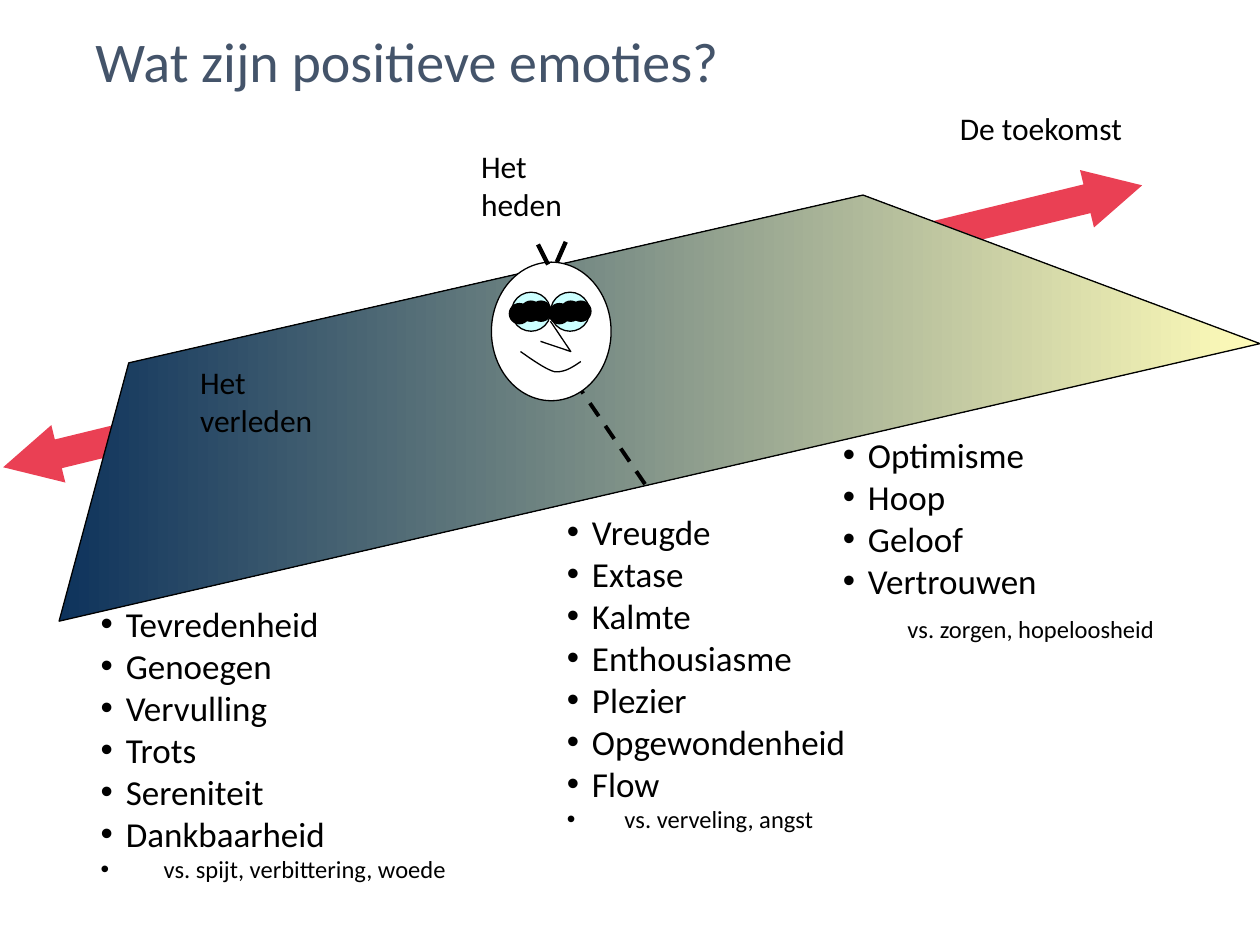
import dataclasses

import pptx
import pptx.dml.color
import pptx.enum.dml
import pptx.enum.shapes
import pptx.enum.text
import pptx.oxml.ns
import pptx.util
from lxml import etree

Pt = pptx.util.Pt
SHAPE = pptx.enum.shapes.MSO_SHAPE
qn = pptx.oxml.ns.qn


@dataclasses.dataclass(frozen=True)
class Theme:
    font: str = "Calibri"
    title: str = "44546A"
    ink: str = "000000"
    arrow: str = "EA4054"
    past: str = "0E335C"
    future: str = "FFFCB9"
    face: str = "FFFFFF"
    eye: str = "CCFFFF"
    title_size: float = 32
    label_size: float = 18
    item_size: float = 20
    contrast_size: float = 14
    outline: float = 0.75


THEME = Theme()


def rgb(color):
    return pptx.dml.color.RGBColor.from_string(color)


def outline(sp, width=THEME.outline):
    sp.line.color.rgb = rgb(THEME.ink)
    sp.line.width = Pt(width)


def add_arrow(s, left, top, rotation):
    sp = s.shapes.add_shape(SHAPE.LEFT_ARROW, Pt(left), Pt(top), Pt(130.3), Pt(33.8))
    sp.rotation = rotation
    sp.adjustments[0], sp.adjustments[1] = 0.5, 0.96
    sp.shadow.inherit = False
    sp.fill.solid()
    sp.fill.fore_color.rgb = rgb(THEME.arrow)
    sp.line.fill.background()


def add_oval(s, left, top, width, height, color):
    sp = s.shapes.add_shape(SHAPE.OVAL, Pt(left), Pt(top), Pt(width), Pt(height))
    sp.shadow.inherit = False
    sp.fill.solid()
    sp.fill.fore_color.rgb = rgb(color)
    outline(sp)


def add_line(s, start, end, width, dash=None):
    sp = s.shapes.add_connector(pptx.enum.shapes.MSO_CONNECTOR.STRAIGHT,
                                *(Pt(v) for v in start + end))
    outline(sp, width)
    if dash is not None:
        sp.line.dash_style = dash
    etree.SubElement(sp.element.spPr, qn("a:effectLst"))


def add_freeform(s, points, close=False):
    first, *rest = [(Pt(x), Pt(y)) for x, y in points]
    builder = s.shapes.build_freeform(*first)
    builder.add_line_segments(rest, close=close)
    sp = builder.convert_to_shape()
    sp.shadow.inherit = False
    sp.fill.background()
    outline(sp)
    return sp


def bezier(p0, p1, p2, p3, steps=10):
    """Points along a cubic curve, both ends included."""
    ts = [i / steps for i in range(steps + 1)]
    return [tuple((1 - t) ** 3 * a + 3 * (1 - t) ** 2 * t * b
                  + 3 * (1 - t) * t ** 2 * c + t ** 3 * d
                  for a, b, c, d in zip(p0, p1, p2, p3)) for t in ts]


def add_text_frame(s, left, top, width, height):
    tf = s.shapes.add_textbox(Pt(left), Pt(top), Pt(width), Pt(height)).text_frame
    tf.word_wrap = True
    tf.auto_size = pptx.enum.text.MSO_AUTO_SIZE.SHAPE_TO_FIT_TEXT
    return tf


def add_run(p, text, size, color=THEME.ink):
    r = p.add_run()
    r.text = text
    r.font.name = THEME.font
    r.font.size = Pt(size)
    r.font.color.rgb = rgb(color)


def set_indent(p, margin, bullet=False):
    pPr = p._p.get_or_add_pPr()
    pPr.set("marL", str(Pt(margin)))
    pPr.set("indent", str(Pt(-margin if bullet else 0)))
    if bullet:
        etree.SubElement(pPr, qn("a:buFont")).set("typeface", "Arial")
        etree.SubElement(pPr, qn("a:buChar")).set("char", "•")


def add_label(s, box, text):
    add_run(add_text_frame(s, *box).paragraphs[0], text, THEME.label_size)


def add_emotions(s, box, items, contrast, margin, bullet=True):
    tf = add_text_frame(s, *box)
    for i, item in enumerate(items):
        p = tf.add_paragraph() if i else tf.paragraphs[0]
        set_indent(p, 14.4, bullet=True)
        add_run(p, item, THEME.item_size)
    p = tf.add_paragraph()
    if not bullet:
        p.space_before = Pt(7)
    set_indent(p, margin, bullet)
    add_run(p, contrast, THEME.contrast_size)


def add_title(s, text):
    p = add_text_frame(s, -24.5, 11.5, 585.4, 46.1).paragraphs[0]
    set_indent(p, 72)
    add_run(p, text, THEME.title_size, THEME.title)


def add_time_plane(s):
    sp = add_freeform(s, [(33.8, 355), (73.6, 207.4), (493.2, 111.5), (720, 196.4)],
                      close=True)
    sp.fill.gradient()
    sp.fill.gradient_angle = 0
    for stop, position, color in zip(sp.fill.gradient_stops, (0, 1),
                                     (THEME.past, THEME.future)):
        stop.position = position
        stop.color.rgb = rgb(color)


def add_face(s):
    add_oval(s, 280.8, 149.8, 68.4, 79.2, THEME.face)
    for left in (292.3, 314.6):
        add_oval(s, left, 167, 22.3, 22.3, THEME.eye)
    # Mouth and nose
    middle = (316.8, 212.4)
    mouth = bezier((331.9, 206.6), (327.6, 209.5), (322.6, 213.1), middle)
    mouth += bezier(middle, (311.8, 211), (304.6, 205.9), (297.4, 200.9))[1:]
    add_freeform(s, mouth)
    add_freeform(s, [(314.6, 183.6), (326.2, 200.9), (308.9, 195.1)])
    # Hair
    add_line(s, (313.2, 151.2), (307.4, 139.7), 2.5)
    add_line(s, (318.2, 149.8), (323.3, 138.2), 2.5)
    # Rolling pupils, three positions in each eye
    for left, top in ((326.2, 172.1), (320.4, 172.1), (313.9, 173.5)):
        for shift in (0, -22.8):
            add_oval(s, left + shift, top, 11.5, 11.5, THEME.ink)


def main():
    prs = pptx.Presentation()
    prs.slide_width, prs.slide_height = Pt(720), Pt(540)
    s = prs.slides.add_slide(prs.slide_layouts[6])

    # Time axis
    add_arrow(s, 0, 234.7, 346.3)
    add_arrow(s, 524.2, 104.4, 166.3)
    add_title(s, "Wat zijn positieve emoties?")
    add_time_plane(s)
    add_line(s, (293, 165.6), (369.5, 278), 2.25, pptx.enum.dml.MSO_LINE.DASH)

    # Periods
    add_label(s, (541.4, 59, 115.2, 28.8), "De toekomst")
    add_label(s, (107.3, 203.8, 105, 51.1), "Het verleden")
    add_label(s, (267.8, 80.6, 85, 51.1), "Het heden")

    # Emotions for each period
    add_emotions(s, (474.5, 244.1, 245.5, 128.2),
                 ["Optimisme", "Hoop", "Geloof", "Vertrouwen"],
                 "vs. zorgen, hopeloosheid", 37, bullet=False)
    add_emotions(s, (316.8, 288, 285.1, 211),
                 ["Vreugde", "Extase", "Kalmte", "Enthousiasme", "Plezier",
                  "Opgewondenheid", "Flow"],
                 "vs. verveling, angst", 33)
    add_emotions(s, (50.4, 340.6, 288.7, 170),
                 ["Tevredenheid", "Genoegen", "Vervulling", "Trots", "Sereniteit",
                  "Dankbaarheid"],
                 "vs. spijt, verbittering, woede", 36)

    add_face(s)
    prs.save("out.pptx")


if __name__ == "__main__":
    main()
